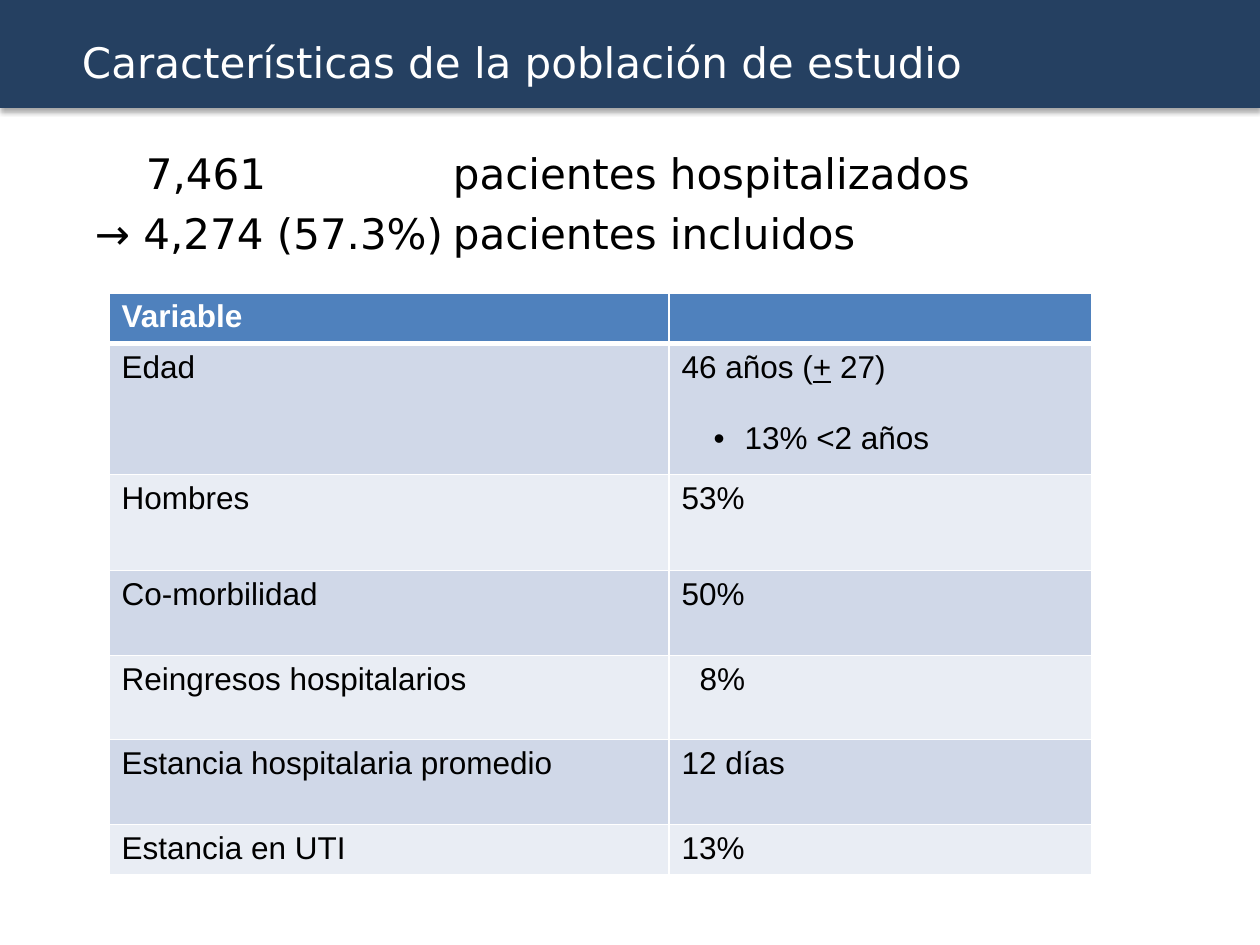
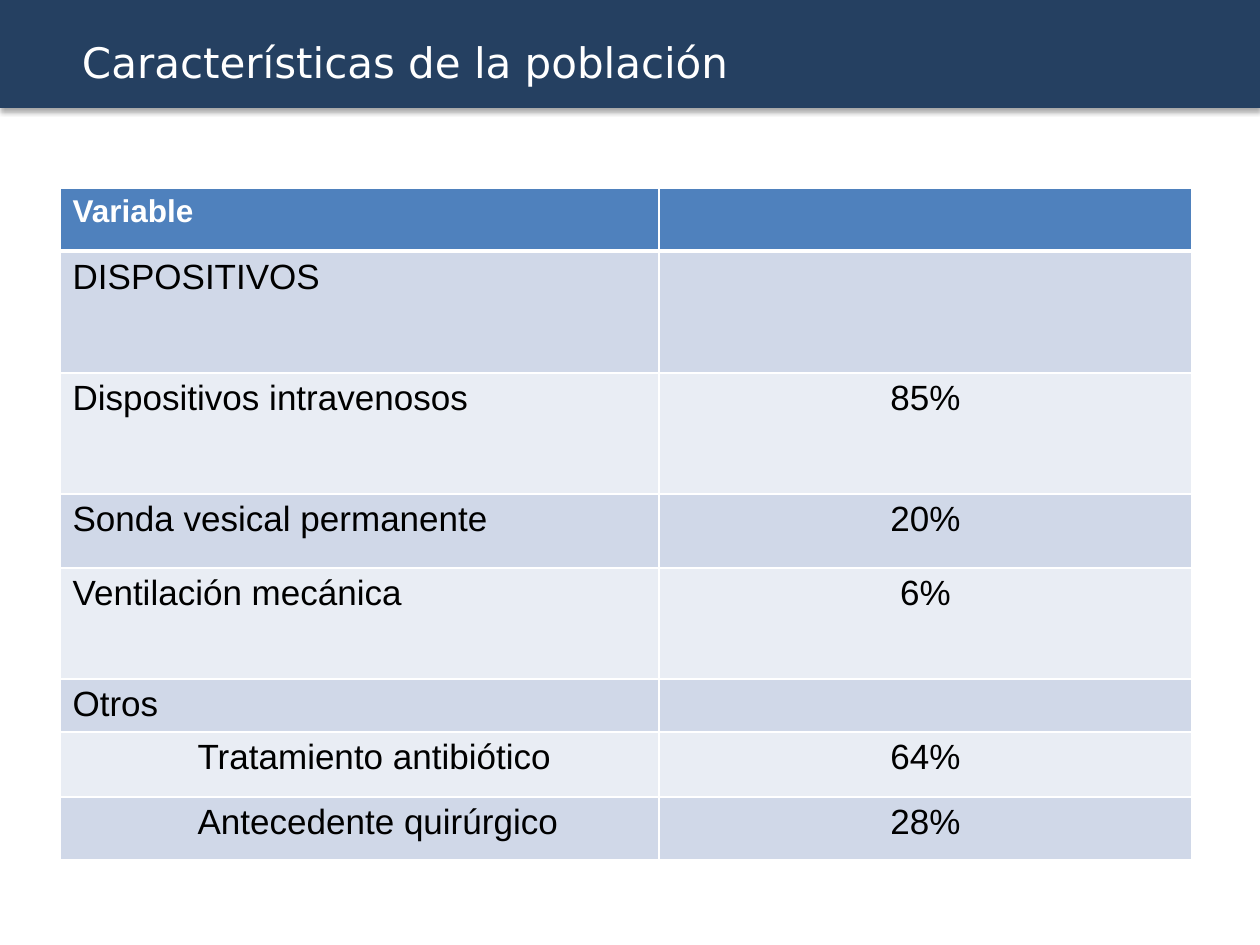
from lxml.etree import SubElement
from pptx import Presentation
from pptx.dml.color import RGBColor
from pptx.enum.text import MSO_ANCHOR, MSO_AUTO_SIZE, PP_ALIGN
from pptx.oxml import parse_xml
from pptx.oxml.ns import nsdecls, qn
from pptx.util import Emu, Pt

COLORS = {
    "band": "254061",
    "header": "4F81BD",
    "odd": "D0D8E8",
    "even": "E9EDF4",
    "white": "FFFFFF",
    "black": "000000",
}
TITLE_FONT = "DejaVu Sans"
TABLE_FONT = "Arial"

PATIENT_COUNTS = [
    "\t7,461\tpacientes hospitalizados",
    "→ 4,274 (57.3%)\tpacientes incluidos",
]
COUNT_TABS = [51, 358]

SLIDES = [
    {
        "title": "Características de la población de estudio",
        "counts": PATIENT_COUNTS,
        "origin": (109, 293),
        "columns": [560, 423],
        "heights": [50, 131, 96, 85, 84, 85, 50],
        "size": 18,
        "value_align": PP_ALIGN.LEFT,
        "rows": [
            ("Variable", ""),
            ("Edad", "46 años (± 27)"),
            ("Hombres", "53%"),
            ("Co-morbilidad", "50%"),
            ("Reingresos hospitalarios", "8%"),
            ("Estancia hospitalaria promedio", "12 días"),
            ("Estancia en UTI", "13%"),
        ],
        "underlined": {(1, 1): ["46 años (", "+", " 27)"]},
        "bullets": {(1, 1): "13% <2 años"},
        "indents": {(4, 1): 18},
    },
    {
        "title": "Características de la población",
        "counts": [],
        "origin": (60, 188),
        "columns": [599, 533],
        "heights": [63, 122, 121, 74, 111, 53, 65, 63],
        "size": 20,
        "value_align": PP_ALIGN.CENTER,
        "rows": [
            ("Variable", ""),
            ("DISPOSITIVOS", ""),
            ("Dispositivos intravenosos", "85%"),
            ("Sonda vesical permanente", "20%"),
            ("Ventilación mecánica", "6%"),
            ("Otros", ""),
            ("Tratamiento antibiótico", "64%"),
            ("Antecedente quirúrgico", "28%"),
        ],
        "underlined": {},
        "bullets": {},
        "indents": {(6, 0): 125, (7, 0): 125},
    },
]


def px(length):
    return Emu(round(length * 914400 / 126))


def color(name):
    return RGBColor.from_string(COLORS[name])


def format_spans(para, font, size, shade, bold=False):
    for span in para.runs:
        span.font.name = font
        span.font.size = Pt(size)
        span.font.bold = bold
        span.font.color.rgb = color(shade)


def add_title(page, text):
    title = page.shapes.title
    title.left, title.top, title.width, title.height = px(0), px(0), px(1260), px(108)
    title.fill.solid()
    title.fill.fore_color.rgb = color("band")
    title.line.fill.background()
    title._element.spPr.append(parse_xml(
        f'<a:effectLst {nsdecls("a")}><a:outerShdw blurRad="40000" dist="23000" '
        f'dir="5400000" rotWithShape="0"><a:srgbClr val="{COLORS["black"]}">'
        '<a:alpha val="35000"/></a:srgbClr></a:outerShdw></a:effectLst>'))
    frame = title.text_frame
    frame.text = text
    frame.word_wrap = True
    frame.auto_size = MSO_AUTO_SIZE.NONE
    frame.vertical_anchor = MSO_ANCHOR.MIDDLE
    frame.margin_left, frame.margin_top, frame.margin_bottom = px(82), px(16), px(0)
    frame.paragraphs[0].alignment = PP_ALIGN.LEFT
    format_spans(frame.paragraphs[0], TITLE_FONT, 24, "white")


def add_counts(page, lines):
    frame = page.shapes.add_textbox(px(95), px(148), px(1095), px(110)).text_frame
    frame.word_wrap = True
    frame.margin_left = frame.margin_right = frame.margin_top = frame.margin_bottom = 0
    frame.text = "\n".join(lines)
    for index, para in enumerate(frame.paragraphs):
        para.space_before = Pt(5 if index else 0)
        format_spans(para, TITLE_FONT, 24, "black")
        tabs = SubElement(para._p.get_or_add_pPr(), qn("a:tabLst"))
        for position in COUNT_TABS:
            SubElement(tabs, qn("a:tab"), pos=str(px(position)), algn="l")


def set_borders(cell, row):
    widths = {"L": 1, "R": 1, "T": 3 if row == 1 else 1, "B": 3 if row == 0 else 1}
    properties = cell._tc.get_or_add_tcPr()
    for index, (side, width) in enumerate(widths.items()):
        properties.insert(index, parse_xml(
            f'<a:ln{side} {nsdecls("a")} w="{Pt(width)}"><a:solidFill>'
            f'<a:srgbClr val="{COLORS["white"]}"/></a:solidFill></a:ln{side}>'))


def add_bullet(frame, text):
    para = frame.add_paragraph()
    para.text = text
    para.space_before = Pt(20.5)
    properties = para._p.get_or_add_pPr()
    properties.set("marL", str(px(63)))
    properties.set("indent", str(-px(31)))
    SubElement(properties, qn("a:buFont"), typeface=TABLE_FONT)
    SubElement(properties, qn("a:buChar"), char="•")


def fill_cell(cell, content, row, column):
    cell.fill.solid()
    shade = "header" if row == 0 else "odd" if row % 2 else "even"
    cell.fill.fore_color.rgb = color(shade)
    set_borders(cell, row)
    text = content["rows"][row][column]
    if not text:
        return
    frame = cell.text_frame
    para = frame.paragraphs[0]
    place = (row, column)
    for index, part in enumerate(content["underlined"].get(place, [text])):
        span = para.add_run()
        span.text = part
        span.font.underline = index == 1
    if column == 1:
        para.alignment = content["value_align"]
    if place in content["indents"]:
        para._p.get_or_add_pPr().set("marL", str(px(content["indents"][place])))
    if place in content["bullets"]:
        add_bullet(frame, content["bullets"][place])
    for para in frame.paragraphs:
        if row == 0:
            format_spans(para, TABLE_FONT, 18, "white", True)
        else:
            format_spans(para, TABLE_FONT, content["size"], "black")


def add_data_table(page, content):
    columns, heights = content["columns"], content["heights"]
    left, top = content["origin"]
    table = page.shapes.add_table(
        len(heights), len(columns), px(left), px(top),
        px(sum(columns)), px(sum(heights))).table
    table.horz_banding = False
    for column, width in enumerate(columns):
        table.columns[column].width = px(width)
    for row, height in enumerate(heights):
        table.rows[row].height = px(height)
        for column in range(len(columns)):
            fill_cell(table.cell(row, column), content, row, column)


def main():
    deck = Presentation()
    deck.slide_width, deck.slide_height = px(1260), px(945)
    for content in SLIDES:
        page = deck.slides.add_slide(deck.slide_layouts[5])
        add_title(page, content["title"])
        if content["counts"]:
            add_counts(page, content["counts"])
        add_data_table(page, content)
    deck.save("out.pptx")


if __name__ == "__main__":
    main()
